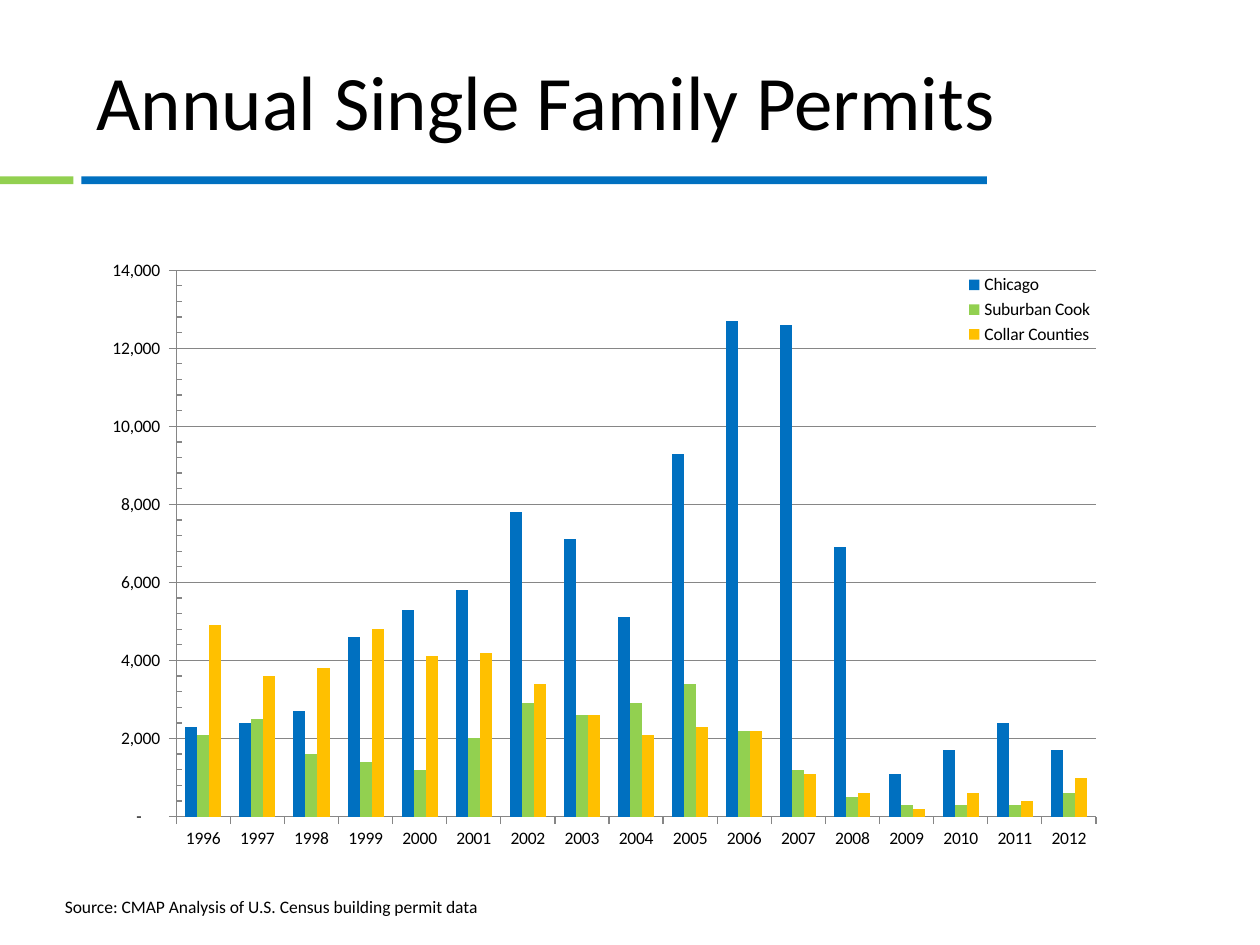
from lxml import etree
from pptx import Presentation
from pptx.chart.data import CategoryChartData
from pptx.dml.color import RGBColor
from pptx.enum.chart import XL_CHART_TYPE, XL_LEGEND_POSITION, XL_TICK_MARK
from pptx.enum.shapes import MSO_SHAPE
from pptx.enum.text import MSO_ANCHOR
from pptx.oxml.ns import qn
from pptx.util import Pt

COLUMNS = XL_CHART_TYPE.COLUMN_CLUSTERED
RIGHT = XL_LEGEND_POSITION.RIGHT
OUTSIDE, INSIDE = XL_TICK_MARK.OUTSIDE, XL_TICK_MARK.INSIDE
RECTANGLE = MSO_SHAPE.RECTANGLE
TOP, MIDDLE = MSO_ANCHOR.TOP, MSO_ANCHOR.MIDDLE
BLACK, BLUE, GREEN, AMBER, GRAY = "000000", "0070C0", "92D050", "FFC000", "868686"
FONT = "Calibri"


def paint(color_format, color):
    color_format.rgb = RGBColor.from_string(color)


def add_text(text, left, top, width, height, size=10, anchor=TOP, wrap=True):
    frame = slide.shapes.add_textbox(Pt(left), Pt(top), Pt(width), Pt(height)).text_frame
    frame.word_wrap = wrap
    frame.vertical_anchor = anchor
    run = frame.paragraphs[0].add_run()
    run.text = text
    run.font.size = Pt(size)
    run.font.name = FONT
    paint(run.font.color, BLACK)


presentation = Presentation()
presentation.slide_width, presentation.slide_height = Pt(720), Pt(540)
slide = presentation.slides.add_slide(presentation.slide_layouts[6])

for left, width, color in ((0, 42, GREEN), (46.5, 517.5, BLUE)):
    rule = slide.shapes.add_shape(RECTANGLE, Pt(left), Pt(100.8), Pt(width), Pt(4.5))
    rule.shadow.inherit = False
    rule.fill.solid()
    paint(rule.fill.fore_color, color)
    rule.line.fill.background()

add_text("Annual Single Family Permits", 48, 18, 642, 78, size=44, anchor=MIDDLE)
add_text("Source: CMAP Analysis of U.S. Census building permit data",
         30, 508.5, 252, 19.5, wrap=False)

permits = (
    ("Chicago", BLUE, (2300, 2400, 2700, 4600, 5300, 5800, 7800, 7100, 5100,
                       9300, 12700, 12600, 6900, 1100, 1700, 2400, 1700)),
    ("Suburban Cook", GREEN, (2100, 2500, 1600, 1400, 1200, 2000, 2900, 2600, 2900,
                              3400, 2200, 1200, 500, 300, 300, 300, 600)),
    ("Collar Counties", AMBER, (4900, 3600, 3800, 4800, 4100, 4200, 3400, 2600, 2100,
                                2300, 2200, 1100, 600, 200, 600, 400, 1000)),
)
permit_data = CategoryChartData()
permit_data.categories = [str(year) for year in range(1996, 2013)]
for area, color, counts in permits:
    permit_data.add_series(area, counts)

chart = slide.shapes.add_chart(COLUMNS, Pt(54), Pt(144), Pt(584), Pt(347), permit_data).chart
chart.has_title = False
chart.font.name = FONT
chart.font.size = Pt(10)
paint(chart.font.color, BLACK)

bars = chart.plots[0]
bars.gap_width = 150
bars.overlap = 0
bars.vary_by_categories = False
for series, (area, color, counts) in zip(bars.series, permits):
    series.format.fill.solid()
    paint(series.format.fill.fore_color, color)
    series.invert_if_negative = False

years, totals = chart.category_axis, chart.value_axis
years.major_tick_mark = OUTSIDE
totals.major_tick_mark = OUTSIDE
totals.minor_tick_mark = INSIDE
totals.minimum_scale, totals.maximum_scale = 0, 14000
totals.major_unit, totals.minor_unit = 2000, 400
totals.has_major_gridlines = True
totals.tick_labels.number_format = '_(* #,##0_);_(* \\(#,##0\\);_(* "-"??_);_('
totals.tick_labels.number_format_is_linked = False
for lined in (years, totals, totals.major_gridlines):
    lined.format.line.width = Pt(0.75)
    paint(lined.format.line.color, GRAY)

chart.has_legend = True
legend = chart.legend
legend.position = RIGHT
legend.include_in_layout = False
legend.font.name = FONT
legend.font.size = Pt(10)
paint(legend.font.color, BLACK)

plot_area = bars._element.getparent()
legend_area = legend._element
for area, index, target, bounds in (
    (plot_area, 0, "inner", (0.08, 0.03, 0.9, 0.9)),
    (legend_area, 1, None, (0.84, 0.03, 0.15, 0.13)),
):
    for automatic in area.findall(qn("c:layout")):
        area.remove(automatic)
    layout = etree.Element(qn("c:layout"))
    manual = etree.SubElement(layout, qn("c:manualLayout"))
    settings = [("layoutTarget", target)] if target else []
    settings += [("xMode", "edge"), ("yMode", "edge")]
    settings += zip("xywh", bounds)
    for tag, setting in settings:
        etree.SubElement(manual, qn("c:" + tag)).set("val", str(setting))
    area.insert(index, layout)

presentation.save("out.pptx")
